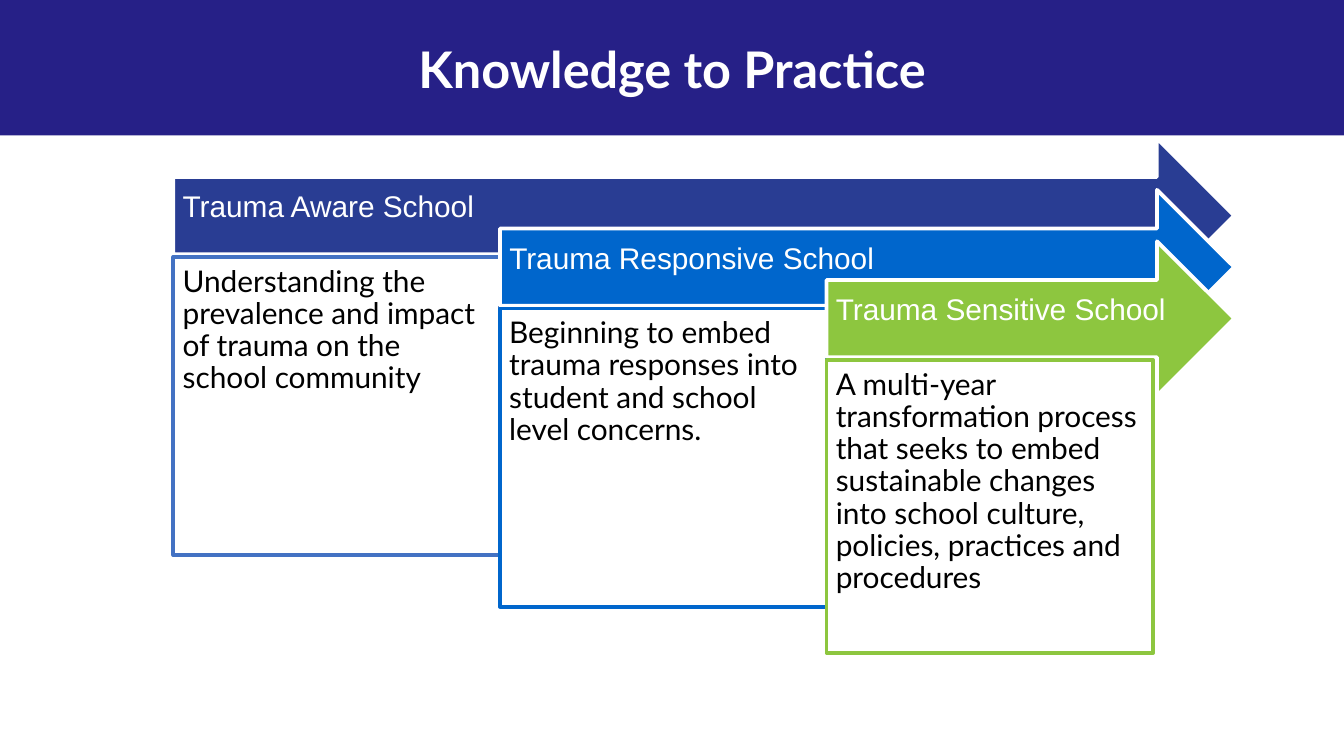
from pptx import Presentation
from pptx.dml.color import RGBColor
from pptx.enum.shapes import MSO_SHAPE
from pptx.enum.text import MSO_ANCHOR, MSO_AUTO_SIZE, PP_ALIGN
from pptx.util import Pt

RECTANGLE, ARROW = MSO_SHAPE.RECTANGLE, MSO_SHAPE.RIGHT_ARROW
TOP, MIDDLE = MSO_ANCHOR.TOP, MSO_ANCHOR.MIDDLE
LEFT, CENTER = PP_ALIGN.LEFT, PP_ALIGN.CENTER
NO_AUTOFIT = MSO_AUTO_SIZE.NONE

WHITE = RGBColor(0xFF, 0xFF, 0xFF)
BLACK = RGBColor(0x00, 0x00, 0x00)
INDIGO = RGBColor(0x26, 0x20, 0x87)
NAVY = RGBColor(0x29, 0x3D, 0x93)
STEEL = RGBColor(0x43, 0x72, 0xC3)
BLUE = RGBColor(0x00, 0x66, 0xCC)
GREEN = RGBColor(0x8D, 0xC6, 0x3F)

# Stage geometry in points
STAGE_LEFT, STAGE_TOP = 92.9, 74.1
STEP_X, STEP_Y = 174.95, 27.6
ARROW_RIGHT, ARROW_HEIGHT = 661.2, 82.8
BOX_OFFSET = 63.6

# Heading, description, arrow colour, box line colour, box height
STAGES = [
    ("Trauma Aware School",
     "Understanding the prevalence and impact of trauma on the school community",
     NAVY, STEEL, 159.8),
    ("Trauma Responsive School",
     "Beginning to embed trauma responses into student and school level concerns.",
     BLUE, BLUE, 159.8),
    ("Trauma Sensitive School",
     "A multi-year transformation process that seeks to embed sustainable "
     "changes into school culture, policies, practices and procedures",
     GREEN, GREEN, 157),
]


class SlideBuilder:
    heading_font = {"name": "Arial", "size": Pt(16), "bold": False}
    body_font = {"name": "Lato", "size": Pt(16), "bold": False}
    title_font = {"name": "Lato", "size": Pt(27), "bold": True}

    def __init__(self, slide):
        self.slide = slide

    def set_text(self, shape, text, font, color, align, anchor, insets, spacing):
        frame = shape.text_frame
        frame.text = text
        left, top, right, bottom = map(Pt, insets)
        frame_format = {
            "word_wrap": True, "auto_size": NO_AUTOFIT, "vertical_anchor": anchor,
            "margin_left": left, "margin_top": top,
            "margin_right": right, "margin_bottom": bottom,
        }
        paragraph = frame.paragraphs[0]
        paragraph_format = {"alignment": align, "line_spacing": spacing}
        for target, values in ((frame, frame_format), (paragraph, paragraph_format),
                               (paragraph.font, font)):
            for name, value in values.items():
                setattr(target, name, value)
        paragraph.font.color.rgb = color

    def shape(self, kind, bounds, fill, line=None):
        shape = self.slide.shapes.add_shape(kind, *map(Pt, bounds))
        shape.shadow.inherit = False
        shape.fill.solid()
        shape.fill.fore_color.rgb = fill
        if line is None:
            shape.line.fill.background()
        else:
            shape.line.color.rgb = line
            shape.line.width = Pt(2)
        return shape

    def band(self, bounds, fill):
        band = self.shape(RECTANGLE, bounds, fill)
        # Send the band behind the title
        self.slide.shapes._spTree.insert(2, band._element)

    def title(self, text, bounds):
        title = self.slide.shapes.title
        title.left, title.top, title.width, title.height = map(Pt, bounds)
        self.set_text(title, text, self.title_font, WHITE, CENTER, MIDDLE,
                      (5, 3, 5, 3), 1.0)

    def arrow(self, text, bounds, fill):
        arrow = self.shape(ARROW, bounds, fill, WHITE)
        self.set_text(arrow, text, self.heading_font, WHITE, LEFT, MIDDLE,
                      (5, 5, 12, 13), 0.9)

    def box(self, text, bounds, line):
        box = self.shape(RECTANGLE, bounds, WHITE, line)
        self.set_text(box, text, self.body_font, BLACK, LEFT, TOP,
                      (5, 5, 5, 5), 0.9)


def main():
    presentation = Presentation()
    presentation.slide_width, presentation.slide_height = Pt(720), Pt(405)
    title_only = presentation.slide_layouts[5]
    builder = SlideBuilder(presentation.slides.add_slide(title_only))

    # Title band
    builder.band((-0.5, 0, 720.5, 72.6), INDIGO)
    builder.title("Knowledge to Practice", (141, 18, 438, 37.4))

    # Overlapping stages, each one step right and down
    for index, (heading, description, fill, line, height) in enumerate(STAGES):
        left = STAGE_LEFT + index * STEP_X
        top = STAGE_TOP + index * STEP_Y
        builder.arrow(heading, (left, top, ARROW_RIGHT - left, ARROW_HEIGHT), fill)
        builder.box(description, (left, top + BOX_OFFSET, STEP_X, height), line)

    presentation.save("out.pptx")


if __name__ == "__main__":
    main()
